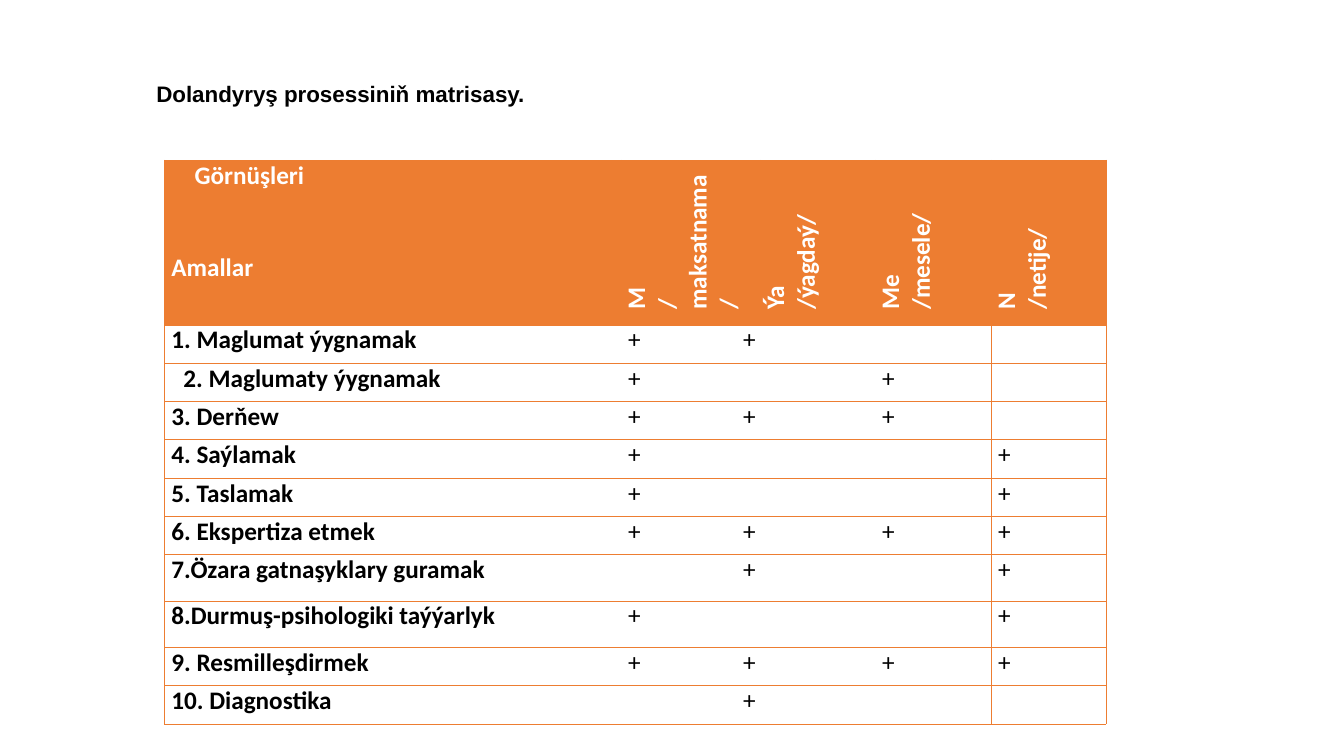
from lxml.etree import SubElement
from pptx import Presentation
from pptx.dml.color import RGBColor
from pptx.enum.text import MSO_ANCHOR as Anchor, MSO_AUTO_SIZE as AutoSize, PP_ALIGN as Align
from pptx.oxml.ns import qn
from pptx.util import Inches, Pt

COLORS = {"orange": "ED7D31", "white": "FFFFFF", "black": "000000"}
COLUMN_WIDTHS = [4.53, 1.14, 0.24, 1.14, 1.15, 1.14]
HEADER_HEIGHT, ROW_HEIGHT, TALL_HEIGHT = 1.53, 0.38, 0.46
TALL_ROWS = (7, 8)
LAST = len(COLUMN_WIDTHS) - 1
KINDS = {
    1: ["M", "/maksatnama/"],
    3: ["Ýa", "/ýagdaý/"],
    4: ["Me ", "/mesele/"],
    5: ["N ", "/netije/"],
}
ACTIONS = [
    ("1. Maglumat ýygnamak", (1, 2)),
    ("2. Maglumaty ýygnamak", (1, 4)),
    ("3. Derňew", (1, 2, 4)),
    ("4. Saýlamak", (1, 5)),
    ("5. Taslamak", (1, 5)),
    ("6. Ekspertiza etmek", (1, 2, 4, 5)),
    ("7.Özara gatnaşyklary guramak", (2, 5)),
    ("8.Durmuş-psihologiki taýýarlyk", (1, 5)),
    ("9. Resmilleşdirmek", (1, 2, 4, 5)),
    ("10. Diagnostika", (2,)),
]


def indent(paragraph, left=0, first=0):
    properties = paragraph._p.get_or_add_pPr()
    properties.set("marL", str(Inches(left)))
    properties.set("indent", str(Inches(first)))


def style(paragraph, size, font, color, bold):
    for run in paragraph.runs:
        run.font.size = Pt(size)
        run.font.name = font
        run.font.bold = bold
        run.font.color.rgb = RGBColor.from_string(COLORS[color])


def write_cell(cell, lines, color="black", bold=False, left=0):
    cell.text_frame.text = "\n".join(lines)
    for paragraph in cell.text_frame.paragraphs:
        paragraph.alignment = Align.JUSTIFY
        indent(paragraph, left)
        style(paragraph, 18, "Calibri", color, bold)


def draw_borders(cell, sides):
    properties = cell._tc.get_or_add_tcPr()
    for side in "LRTB":
        line = SubElement(properties, qn(f"a:ln{side}"), w=str(Pt(0.5)))
        if side in sides:
            fill = SubElement(line, qn("a:solidFill"))
            SubElement(fill, qn("a:srgbClr"), val=COLORS["orange"])
        else:
            SubElement(line, qn("a:noFill"))


def format_cell(cell, row, column):
    cell.margin_left = cell.margin_right = Inches(0.07)
    cell.margin_top = cell.margin_bottom = 0
    sides = "TB"
    if row == 0 or column in (0, LAST):
        sides += "L"
    if row == 0 or column >= LAST - 1:
        sides += "R"
    draw_borders(cell, sides)
    if row == 0:
        cell.fill.solid()
        cell.fill.fore_color.rgb = RGBColor.from_string(COLORS["orange"])
    else:
        cell.fill.background()


def add_title(slide):
    title = slide.shapes.title
    title.left, title.top = Inches(1.33), Inches(0.74)
    title.width, title.height = Inches(11.22), Inches(0.37)
    frame = title.text_frame
    frame.text = "Dolandyryş prosessiniň matrisasy."
    frame.word_wrap = True
    frame.auto_size = AutoSize.SHAPE_TO_FIT_TEXT
    frame.vertical_anchor = Anchor.MIDDLE
    heading = frame.paragraphs[0]
    heading.alignment = Align.LEFT
    heading.line_spacing = 1.0
    heading.space_before = Pt(0)
    indent(heading, first=0.12)
    style(heading, 16, "Arial", "black", True)


def fill_header(matrix):
    corner = matrix.cell(0, 0)
    write_cell(corner, ["Görnüşleri", "Amallar"], "white", True)
    kinds, actions = corner.text_frame.paragraphs
    indent(kinds, first=0.23)
    actions.space_before = Pt(44)
    for column, lines in KINDS.items():
        cell = matrix.cell(0, column)
        write_cell(cell, lines, "white", True, left=0.08)
        cell._tc.get_or_add_tcPr().set("vert", "vert270")
    matrix.cell(0, 1).vertical_anchor = Anchor.MIDDLE


def add_matrix(slide):
    heights = [HEADER_HEIGHT] + [
        TALL_HEIGHT if row in TALL_ROWS else ROW_HEIGHT
        for row in range(1, len(ACTIONS) + 1)
    ]
    matrix = slide.shapes.add_table(
        len(heights), len(COLUMN_WIDTHS), Inches(1.63), Inches(1.59),
        Inches(sum(COLUMN_WIDTHS)), Inches(sum(heights)),
    ).table
    matrix.first_row = matrix.horz_banding = False
    for column, width in enumerate(COLUMN_WIDTHS):
        matrix.columns[column].width = Inches(width)
    for row, height in enumerate(heights):
        matrix.rows[row].height = Inches(height)
        for column in range(len(COLUMN_WIDTHS)):
            format_cell(matrix.cell(row, column), row, column)
        start = 1 if row == 0 else 2
        matrix.cell(row, start).merge(matrix.cell(row, start + 1))
    fill_header(matrix)
    for row, (action, marks) in enumerate(ACTIONS, 1):
        write_cell(matrix.cell(row, 0), [action], bold=True)
        for column in marks:
            write_cell(matrix.cell(row, column), ["+"])
    indent(matrix.cell(2, 0).text_frame.paragraphs[0], first=0.12)


def main():
    deck = Presentation()
    deck.slide_width, deck.slide_height = Inches(13.33), Inches(7.5)
    slide = deck.slides.add_slide(deck.slide_layouts[5])
    add_title(slide)
    add_matrix(slide)
    deck.save("out.pptx")


if __name__ == "__main__":
    main()
